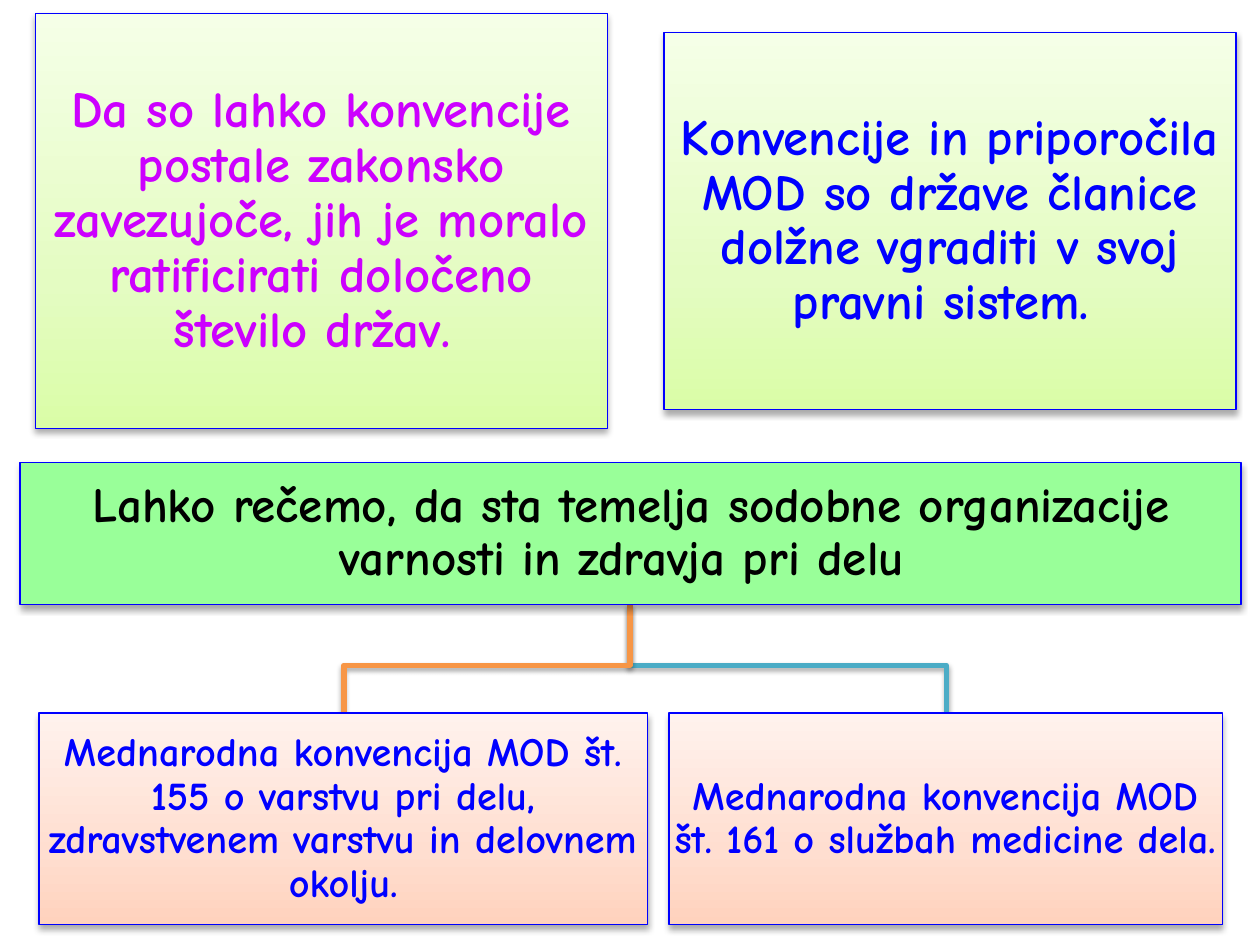
from dataclasses import dataclass
from typing import Any

from pptx import Presentation
from pptx.dml.color import RGBColor
from pptx.enum.shapes import MSO_SHAPE
from pptx.enum.text import MSO_ANCHOR, PP_ALIGN
from pptx.oxml import parse_xml
from pptx.oxml.ns import nsdecls
from pptx.util import Inches, Pt

FONT = "Comic Neue"
BLUE = "0000FF"
GREEN = ("DAFDA7", "E4FCC2", "F5FFE7")
PEACH = ("FFD2BD", "FFDED0", "FFF2ED")
STOPS = (0, 35, 100)


@dataclass(frozen=True)
class Box:
    """A framed text with a fill of one colour or three gradient colours."""
    text: str
    left: float
    top: float
    width: float
    height: float
    fill: tuple[str, ...]
    ink: str
    size: int
    inset: float = 0.02


@dataclass(frozen=True)
class Branch:
    """A bent line from the header down to a lower box."""
    end: float
    tint: str


BOXES = (
    Box("Da so lahko konvencije postale zakonsko zavezujoče, jih je moralo "
        "ratificirati določeno število držav. ",
        0.28, 0.11, 4.54, 3.29, GREEN, "CC00FF", 29, 0.12),
    Box("Konvencije in priporočila MOD so države članice dolžne vgraditi v "
        "svoj pravni sistem. ",
        5.27, 0.26, 4.54, 2.99, GREEN, BLUE, 29, 0.12),
    Box("Lahko rečemo, da sta temelja sodobne organizacije varnosti in "
        "zdravja pri delu ",
        0.16, 3.67, 9.69, 1.13, ("99FF99",), "000000", 28),
    Box("Mednarodna konvencija MOD št. 155 o varstvu pri delu, zdravstvenem "
        "varstvu in delovnem okolju.",
        0.31, 5.66, 4.83, 1.68, PEACH, BLUE, 23),
    Box("Mednarodna konvencija MOD št. 161 o službah medicine dela.",
        5.31, 5.66, 4.39, 1.68, PEACH, BLUE, 23),
)
FORKS = (Branch(7.51, "4BACC6"), Branch(2.73, "F79646"))


def color(code: str) -> RGBColor:
    """Turn a hex string into a colour."""
    return RGBColor.from_string(code)


def apply(item: Any, form: dict[str, Any]) -> None:
    """Set each named value on the item."""
    for name, value in form.items():
        setattr(item, name, value)


def shade(shape: Any, blur: float, drop: float, alpha: int) -> None:
    """Give the shape a soft shadow straight below it."""
    shape.shadow.inherit = False
    shape._element.spPr.find(".//{*}effectLst").append(parse_xml(
        f'<a:outerShdw {nsdecls("a")} blurRad="{Pt(blur)}" dist="{Pt(drop)}" '
        f'dir="5400000" rotWithShape="0"><a:srgbClr val="000000">'
        f'<a:alpha val="{alpha * 1000}"/></a:srgbClr></a:outerShdw>'))


def paint(shape: Any, tints: tuple[str, ...]) -> None:
    """Fill with one colour, or with a gradient rising from the bottom."""
    if len(tints) == 1:
        shape.fill.solid()
        shape.fill.fore_color.rgb = color(tints[0])
        return
    shape.fill.gradient()
    shape.fill.gradient_angle = 90
    stops = "".join(
        f'<a:gs pos="{stop * 1000}"><a:srgbClr val="{tint}"/></a:gs>'
        for stop, tint in zip(STOPS, tints))
    old = shape._element.spPr.find(".//{*}gsLst")
    old.getparent().replace(
        old, parse_xml(f'<a:gsLst {nsdecls("a")}>{stops}</a:gsLst>'))


def draw_box(slide: Any, box: Box) -> None:
    """Draw a framed text."""
    place = map(Inches, (box.left, box.top, box.width, box.height))
    shape = slide.shapes.add_shape(MSO_SHAPE.RECTANGLE, *place)
    paint(shape, box.fill)
    shape.line.color.rgb = color(BLUE)
    shape.line.width = Pt(0.75)
    shade(shape, 3.5, 2.2, 32)
    frame = shape.text_frame
    sides = ("left", "top", "right", "bottom")
    apply(frame, {f"margin_{side}": Inches(box.inset) for side in sides})
    apply(frame, {"word_wrap": True, "vertical_anchor": MSO_ANCHOR.MIDDLE})
    para = frame.paragraphs[0]
    apply(para, {"alignment": PP_ALIGN.CENTER, "line_spacing": 0.9})
    run = para.add_run()
    run.text = box.text
    apply(run.font, {"name": FONT, "size": Pt(box.size), "bold": True})
    run.font.color.rgb = color(box.ink)


def draw_fork(slide: Any, fork: Branch) -> None:
    """Draw a bent line."""
    mid, top, bend, low = map(Inches, (5, 4.8, 5.28, 5.66))
    end = Inches(fork.end)
    pen = slide.shapes.build_freeform(mid, top)
    pen.add_line_segments(((mid, bend), (end, bend), (end, low)), close=False)
    shape = pen.convert_to_shape()
    shape.fill.background()
    shape.line.color.rgb = color(fork.tint)
    shape.line.width = Pt(3)
    shade(shape, 3.1, 1.8, 35)


def main() -> None:
    """Build and save the slide."""
    deck = Presentation()
    apply(deck, {"slide_width": Inches(10), "slide_height": Inches(7.5)})
    slide = deck.slides.add_slide(deck.slide_layouts[6])
    for fork in FORKS:
        draw_fork(slide, fork)
    for box in BOXES:
        draw_box(slide, box)
    deck.save("out.pptx")


if __name__ == "__main__":
    main()
